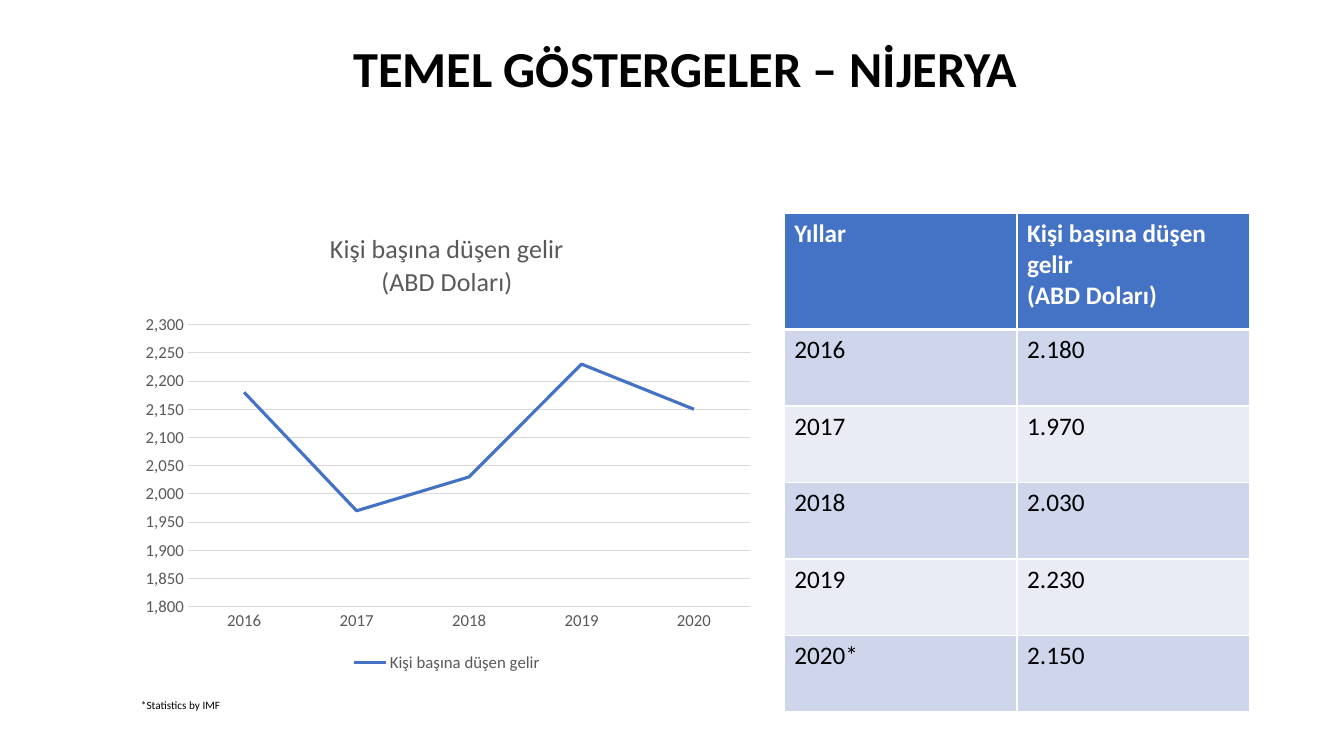
from lxml.etree import SubElement as Sub
from pptx import Presentation
from pptx.chart.data import CategoryChartData as Data
from pptx.dml.color import RGBColor
from pptx.enum.chart import XL_CHART_TYPE as Kind, XL_LEGEND_POSITION as Spot, XL_TICK_MARK as Tick
from pptx.enum.text import MSO_ANCHOR as Anchor, PP_ALIGN as Align
from pptx.oxml import parse_xml
from pptx.oxml.ns import nsdecls, qn
from pptx.util import Pt

FACE = "Calibri"
BLUE, GREY, RULE, WHITE, BLACK = "4472C4", "595959", "D9D9D9", "FFFFFF", "000000"
BANDS = ["CFD5EA", "E9EBF5"]
NAME, UNIT = "Kişi başına düşen gelir", "(ABD Doları)"
YEARS = ["2016", "2017", "2018", "2019", "2020"]
INCOME = [2180, 1970, 2030, 2230, 2150]


def tint(code):
    return RGBColor.from_string(code)


def style(font, size, code, bold=False):
    font.name, font.size, font.bold = FACE, Pt(size), bold
    font.color.rgb = tint(code)


def write(frame, lines, size, code, bold=False):
    for i, line in enumerate(lines):
        para = frame.add_paragraph() if i else frame.paragraphs[0]
        run = para.add_run()
        run.text = line
        style(run.font, size, code, bold)


def place(shape, box):
    shape.left, shape.top, shape.width, shape.height = map(Pt, box)


def add_head(slide, box):
    title = slide.shapes.title
    place(title, box)
    frame = title.text_frame
    frame.word_wrap = True
    frame.vertical_anchor = Anchor.TOP
    write(frame, ["TEMEL GÖSTERGELER – NİJERYA"], 36, BLACK, True)
    frame.paragraphs[0].alignment = Align.CENTER
    frame.paragraphs[0].line_spacing = 0.9


def fix_plot(chart, x, y, w, h):
    area = chart.plots[0]._element.getparent()
    for old in area.findall(qn("c:layout")):
        area.remove(old)
    layout = parse_xml(f"<c:layout {nsdecls('c')}><c:manualLayout/></c:layout>")
    parts = [("layoutTarget", "inner"), ("xMode", "edge"), ("yMode", "edge"),
             ("x", x), ("y", y), ("w", w), ("h", h)]
    for tag, val in parts:
        Sub(layout[0], qn("c:" + tag)).set("val", str(val))
    area.insert(0, layout)


def add_graph(slide, box):
    data = Data(number_format="#,##0")
    data.categories = YEARS
    data.add_series(NAME, INCOME)
    chart = slide.shapes.add_chart(Kind.LINE, *map(Pt, box), data).chart
    style(chart.font, 10, BLACK)
    chart.has_title = True
    write(chart.chart_title.text_frame, [NAME, UNIT], 18.6, GREY)
    chart.chart_title.include_in_layout = False
    chart.has_legend = True
    chart.legend.position = Spot.BOTTOM
    chart.legend.include_in_layout = False
    style(chart.legend.font, 12, GREY)
    cats, vals = chart.category_axis, chart.value_axis
    for axis in (cats, vals):
        axis.major_tick_mark = axis.minor_tick_mark = Tick.NONE
        style(axis.tick_labels.font, 12, GREY)
    vals.minimum_scale, vals.maximum_scale, vals.major_unit = 1800, 2300, 50
    vals.tick_labels.number_format = "#,##0"
    vals.tick_labels.number_format_is_linked = False
    vals.format.line.fill.background()
    for line in (cats.format.line, vals.major_gridlines.format.line):
        line.color.rgb = tint(RULE)
        line.width = Pt(0.75)
    plot = chart.plots[0]
    plot.vary_by_categories = False
    series = plot.series[0]
    series.smooth = False
    series.format.line.color.rgb = tint(BLUE)
    series.format.line.width = Pt(2.25)
    series.marker.style = None
    mark = series.marker._element.get_or_add_marker()
    mark.get_or_add_symbol().set("val", "none")
    fix_plot(chart, 0.09, 0.24, 0.89, 0.61)


def edge(cell, sides):
    props = cell._tc.get_or_add_tcPr()
    for i, (side, width) in enumerate(sides.items()):
        props.insert(i, parse_xml(
            f'<a:ln{side} {nsdecls("a")} w="{Pt(width)}"><a:solidFill>'
            f'<a:srgbClr val="{WHITE}"/></a:solidFill></a:ln{side}>'))


def add_grid(slide, box):
    rows = [[["Yıllar"], [NAME, UNIT]]]
    for year, val in zip(YEARS, INCOME):
        star = "*" if year == YEARS[-1] else ""
        rows.append([[year + star], [f"{val:,}".replace(",", ".")]])
    table = slide.shapes.add_table(len(rows), 2, *map(Pt, box)).table
    top = 82.8
    for col in table.columns:
        col.width = Pt(box[2] / 2)
    for r, row in enumerate(rows):
        head = r == 0
        table.rows[r].height = Pt(top if head else (box[3] - top) / len(YEARS))
        for c, lines in enumerate(row):
            cell = table.cell(r, c)
            cell.fill.solid()
            cell.fill.fore_color.rgb = tint(BLUE if head else BANDS[(r - 1) % 2])
            write(cell.text_frame, lines, 18, WHITE if head else BLACK, head)
            edge(cell, {"L": 1, "R": 1, "T": 3 if r == 1 else 1, "B": 3 if head else 1})


def add_note(slide, box):
    frame = slide.shapes.add_textbox(*map(Pt, box)).text_frame
    frame.word_wrap = True
    write(frame, ["*Statistics by IMF"], 8, BLACK)


def main():
    deck = Presentation()
    deck.slide_width, deck.slide_height = Pt(960), Pt(540)
    slide = deck.slides.add_slide(deck.slide_layouts[5])
    left = 93.6
    add_head(slide, (left, 28, 792, 65))
    add_graph(slide, (left, 152.6, 451.4, 330.5))
    add_grid(slide, (560.2, 152.6, 332.6, 356))
    add_note(slide, (left, 495.4, 366.5, 17))
    deck.save("out.pptx")


if __name__ == "__main__":
    main()
